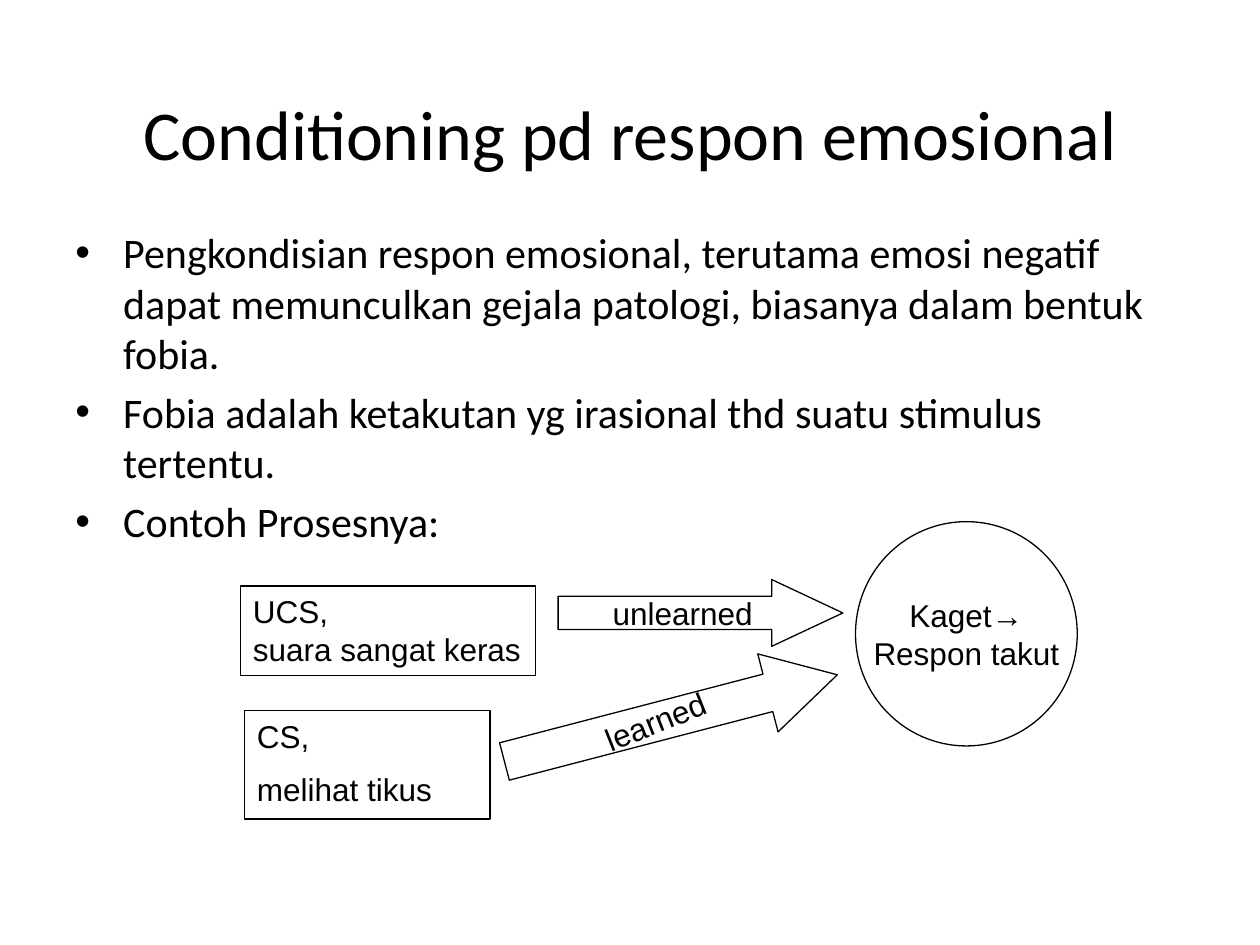
from pptx import Presentation
from pptx.dml.color import RGBColor
from pptx.enum.shapes import MSO_SHAPE as Kind
from pptx.enum.text import MSO_ANCHOR as Anchor, MSO_AUTO_SIZE as Fit, PP_ALIGN as Align
from pptx.oxml.ns import qn
from pptx.util import Inches, Pt
from lxml.etree import SubElement

THEME = {
    "ink": RGBColor(0, 0, 0), "line": Pt(0.75),
    "title": ("Calibri", 40), "body": ("Calibri", 24), "label": ("Arial", 18),
}

TITLE = ("Conditioning pd respon emosional", (0.5, 0.56, 9, 0.99))
BODY_AT = (0.5, 1.75, 9, 4.95)
BODY = [
    "Pengkondisian respon emosional, terutama emosi negatif dapat memunculkan "
    "gejala patologi, biasanya dalam bentuk fobia.",
    "Fobia adalah ketakutan yg irasional thd suatu stimulus tertentu.",
    "Contoh Prosesnya:",
]
BOXES = [
    {"at": (1.91, 4.65, 2.34, 0.71), "text": ["UCS,", "suara sangat keras"], "wrap": False},
    {"at": (1.94, 5.64, 1.95, 0.86), "text": ["CS,", "melihat tikus"], "wrap": True, "gap": 9},
]
RESULT = {"at": (6.79, 4.14, 1.76, 1.78), "text": ["Kaget→", "Respon takut"]}
ARROWS = [
    {"at": (4.43, 4.6, 2.26, 0.53), "text": ["unlearned"], "adj": (0.5, 1.065)},
    {"at": (3.96, 5.38, 2.73, 0.64), "adj": (0.479, 0.889), "turn": 345.4},
]
LEARNED = {"at": (4.68, 5.5, 1.16, 0.4), "text": ["learned"], "turn": 338.4}


def place(at):
    return [Inches(n) for n in at]


def write(shape, lines, role, align=Align.LEFT, anchor=Anchor.TOP,
          wrap=True, gap=0, bullet=False):
    frame = shape.text_frame
    frame.auto_size = Fit.NONE
    frame.word_wrap = wrap
    frame.vertical_anchor = anchor
    face, size = THEME[role]
    for i, line in enumerate(lines):
        para = frame.paragraphs[0] if i == 0 else frame.add_paragraph()
        para.text = line
        para.alignment = align
        para.space_before = Pt(gap if i else 0)
        if bullet:
            props = para._p.get_or_add_pPr()
            props.set("marL", str(Inches(0.38)))
            props.set("indent", str(-Inches(0.38)))
            SubElement(props, qn("a:buFont"), typeface="Arial")
            SubElement(props, qn("a:buChar"), char="•")
        para.font.name = face
        para.font.size = Pt(size)
        para.font.color.rgb = THEME["ink"]


def draw(slide, kind, part, **style):
    shape = slide.shapes.add_shape(kind, *place(part["at"]))
    shape.shadow.inherit = False
    shape.fill.background()
    shape.line.color.rgb = THEME["ink"]
    shape.line.width = THEME["line"]
    shape.rotation = part.get("turn", 0)
    for i, value in enumerate(part.get("adj", ())):
        shape.adjustments[i] = value
    if "text" in part:
        write(shape, part["text"], "label", wrap=part.get("wrap", False),
              gap=part.get("gap", 0), **style)


def main():
    deck = Presentation()
    deck.slide_width, deck.slide_height = Inches(10), Inches(7.5)
    slide = deck.slides.add_slide(deck.slide_layouts[5])

    text, at = TITLE
    head = slide.shapes.title
    head.left, head.top, head.width, head.height = place(at)
    write(head, [text], "title", Align.CENTER, Anchor.MIDDLE)

    body = slide.shapes.add_textbox(*place(BODY_AT))
    write(body, BODY, "body", gap=4.8, bullet=True)

    for box in BOXES:
        draw(slide, Kind.RECTANGLE, box)
    mid = {"align": Align.CENTER, "anchor": Anchor.MIDDLE}
    draw(slide, Kind.OVAL, RESULT, **mid)
    for arrow in ARROWS:
        draw(slide, Kind.RIGHT_ARROW, arrow, **mid)

    tag = slide.shapes.add_textbox(*place(LEARNED["at"]))
    tag.rotation = LEARNED["turn"]
    write(tag, LEARNED["text"], "label")

    deck.save("out.pptx")


if __name__ == "__main__":
    main()
